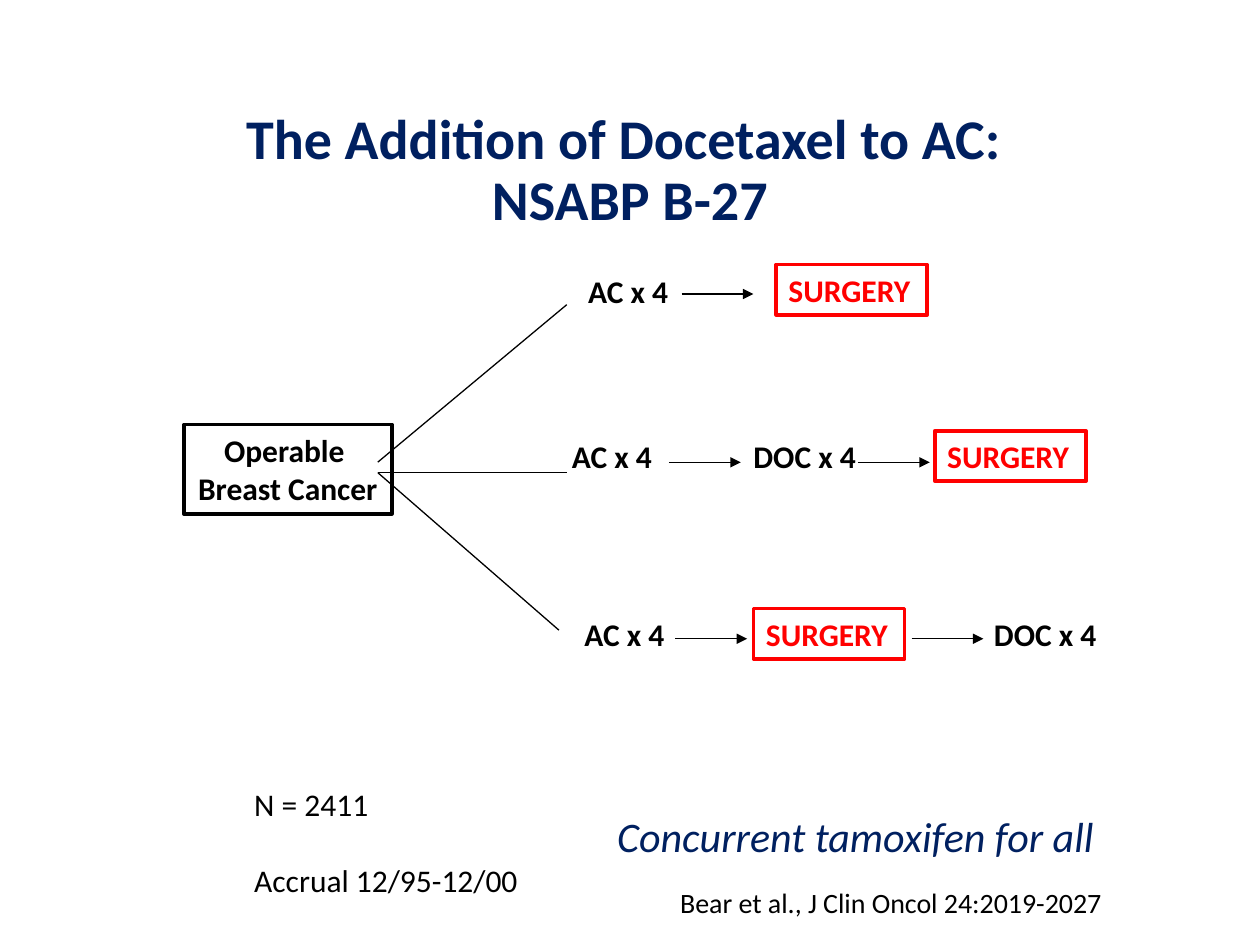
from lxml import etree
from pptx import Presentation
from pptx import util as u
from pptx.dml.color import RGBColor
from pptx.enum import shapes, text
from pptx.oxml.ns import qn

Pt = u.Pt
BLACK, RED, NAVY = "000000", "FF0000", "002060"
STEP_H, ARROW_W = 28.8, 41
STEP_W = {"AC x 4": 61, "DOC x 4": 73.5, "SURGERY": 86.4}


def rgb(value):
    return RGBColor.from_string(value)


def add_text(s, content, x, y, w, h, size=18, color=BLACK, bold=False, italic=False,
             align="LEFT", anchor="TOP", wrap=False, border=None, spacing=None, gap=0):
    if border:
        sp = s.shapes.add_shape(shapes.MSO_SHAPE.RECTANGLE, Pt(x), Pt(y), Pt(w), Pt(h))
        sp.shadow.inherit = False
        sp.fill.background()
        sp.line.color.rgb = rgb(border)
        sp.line.width = Pt(2)
    else:
        sp = s.shapes.add_textbox(Pt(x), Pt(y), Pt(w), Pt(h))
    tf = sp.text_frame
    tf.word_wrap = wrap
    tf.vertical_anchor = text.MSO_ANCHOR[anchor]
    tf.text = content
    for i, p in enumerate(tf.paragraphs):
        p.alignment = text.PP_ALIGN[align]
        if spacing:
            p.line_spacing = spacing
        if i and gap:
            p.space_before = Pt(gap)
        for r in p.runs:
            r.font.name = "Calibri"
            r.font.size = Pt(size)
            r.font.bold = bold
            r.font.italic = italic
            r.font.color.rgb = rgb(color)
    return sp


def add_line(s, x1, y1, x2, y2, arrow=False):
    line = s.shapes.add_connector(shapes.MSO_CONNECTOR.STRAIGHT, Pt(x1), Pt(y1), Pt(x2), Pt(y2))
    line.line.color.rgb = rgb(BLACK)
    line.line.width = Pt(0.75)
    if arrow:
        etree.SubElement(line.line._get_or_add_ln(), qn("a:tailEnd"), type="triangle")
    etree.SubElement(line._element.spPr, qn("a:effectLst"))


def add_title(s, x, y, w, h):
    add_text(s, "The Addition of Docetaxel to AC: \vNSABP B-27", x, y, w, h, size=32,
             color=NAVY, bold=True, align="CENTER", anchor="MIDDLE", wrap=True, spacing=0.9)


def add_population(s, x, y, w, h):
    add_text(s, "Operable \nBreast Cancer", x, y, w, h, bold=True, align="CENTER",
             anchor="MIDDLE", border=BLACK)
    start = x + w - 8
    for y1, x2, y2 in ((21.5, 108, -68.5), (27.5, 108, 27.5), (27.5, 103.5, 117.5)):
        add_line(s, start, y + y1, start + x2, y + y2)


def add_arm(s, x, y, arrow_y, steps, arrows):
    for name, dx, dy in steps:
        color = RED if name == "SURGERY" else BLACK
        add_text(s, name, x + dx, y + dy, STEP_W[name], STEP_H, color=color, bold=True,
                 border=RED if color == RED else None)
    for dx in arrows:
        add_line(s, x + dx, y + arrow_y, x + dx + ARROW_W, y + arrow_y, arrow=True)


def add_notes(s, x, y):
    add_text(s, "N = 2411\nAccrual 12/95-12/00", x, y, 166.3, 72.7, gap=22)
    add_text(s, "Concurrent tamoxifen for all", x + 207.4, y + 14.4, 297.4, 36,
             size=24, color=NAVY, italic=True)
    add_text(s, "Bear et al., J Clin Oncol 24:2019-2027", x + 243.4, y + 57.6, 259.2, 46, size=16)


def main():
    prs = Presentation()
    prs.slide_width, prs.slide_height = Pt(720), Pt(540)
    s = prs.slides.add_slide(prs.slide_layouts[6])
    add_title(s, 49.7, 46, 620.6, 104.4)
    add_population(s, 105.1, 242.6, 118.8, 51.1)
    add_arm(s, 329, 152, 16, [("AC x 4", 0, 0), ("SURGERY", 114.5, -0.8)], [60.5])
    add_arm(s, 319.7, 246.2, 18,
            [("AC x 4", 0, 0), ("DOC x 4", 103.7, 0), ("SURGERY", 214.5, 0)], [62.6, 170.6])
    add_arm(s, 326.9, 347.8, 17.2,
            [("AC x 4", 0, 0), ("SURGERY", 103.7, 0), ("DOC x 4", 234, 0)], [59, 194])
    add_notes(s, 138.2, 445)
    prs.save("out.pptx")


if __name__ == "__main__":
    main()
